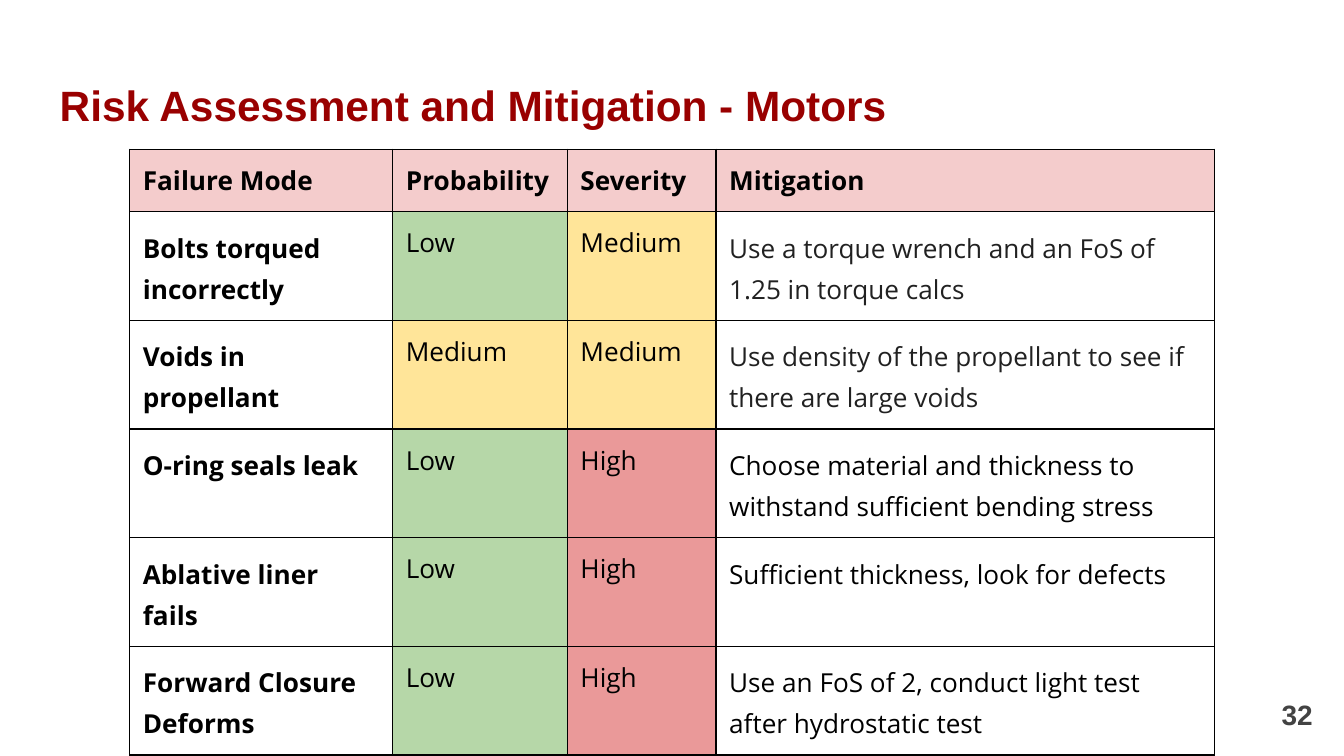
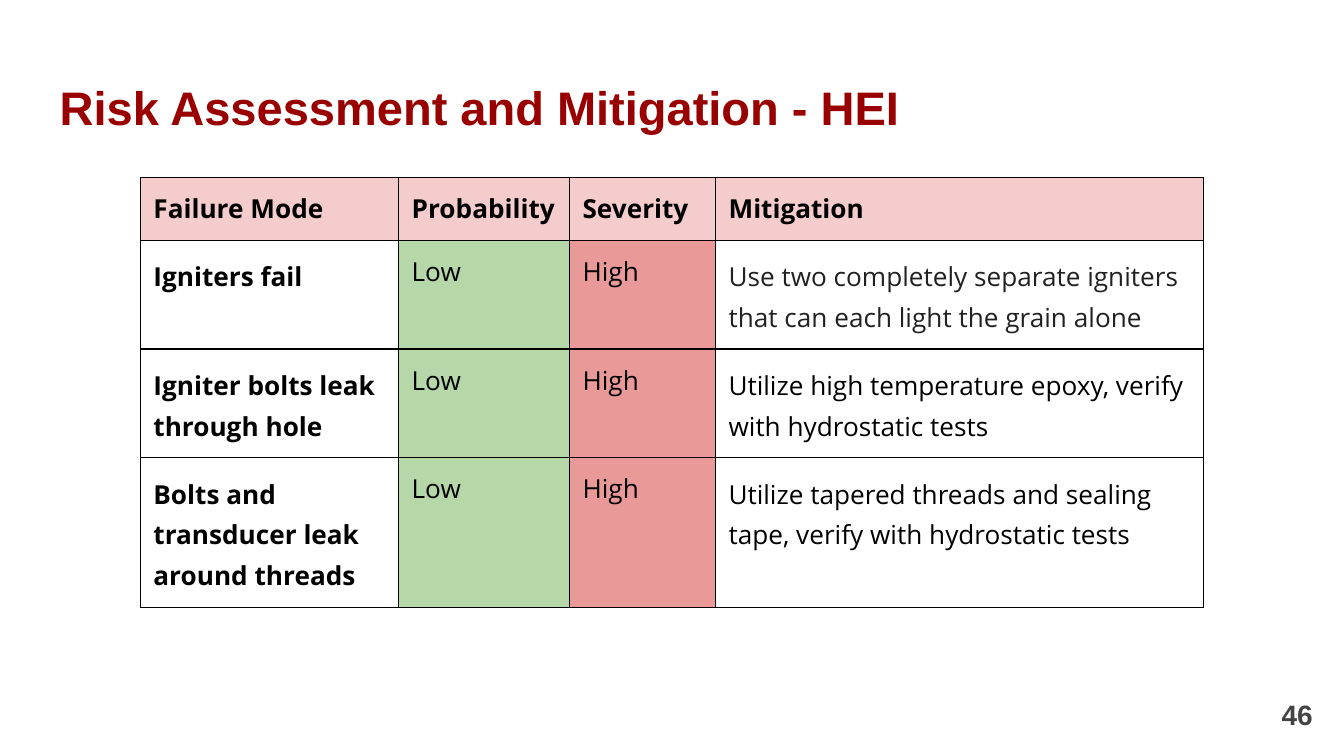
"""Build two risk assessment slides, each with a colour-coded failure mode table."""
import dataclasses

import lxml.etree
import pptx
import pptx.dml.color
import pptx.enum.text
import pptx.oxml.ns
import pptx.util

Cm = pptx.util.Cm
Pt = pptx.util.Pt
qn = pptx.oxml.ns.qn


@dataclasses.dataclass(frozen=True)
class Theme:
    title_font: str = "Arial"
    table_font: str = "Open Sans"
    number_size: float = 15
    table_size: float = 14
    line_height: float = 1.36
    body_spacing: float = 1.15
    title: str = "990000"
    number: str = "434343"
    text: str = "000000"
    soft_text: str = "212121"
    border: str = "000000"
    header_fill: str = "F4CCCC"


theme = Theme()
rating_fills = {"Low": "B6D7A8", "Medium": "FFE599", "High": "EA9999"}
headings = ("Failure Mode", "Probability", "Severity", "Mitigation")
inset = Cm(0.25)
line_height = Pt(theme.table_size * theme.line_height)

risk_slides = [
    {
        "title": "Risk Assessment and Mitigation - Motors",
        "title_size": 22.7,
        "number": "32",
        "left": 2.45,
        "top": 2.82,
        "columns": (4.97, 3.3, 2.81, 9.42),
        "soft_rows": 2,
        "body_lines": (2, 2, 2, 2, 2),
        "risks": [
            ("Bolts torqued incorrectly", "Low", "Medium",
             "Use a torque wrench and an FoS of 1.25 in torque calcs"),
            ("Voids in propellant", "Medium", "Medium",
             "Use density of the propellant to see if there are large voids"),
            ("O-ring seals leak", "Low", "High",
             "Choose material and thickness to withstand sufficient bending stress"),
            ("Ablative liner fails", "Low", "High",
             "Sufficient thickness, look for defects"),
            ("Forward Closure Deforms", "Low", "High",
             "Use an FoS of 2, conduct light test after hydrostatic test"),
        ],
    },
    {
        "title": "Risk Assessment and Mitigation - HEI",
        "title_size": 25.2,
        "number": "46",
        "left": 2.65,
        "top": 3.36,
        "columns": (4.88, 3.23, 2.76, 9.23),
        "soft_rows": 1,
        "body_lines": (2, 2, 3),
        "risks": [
            ("Igniters fail", "Low", "High",
             "Use two completely separate igniters that can each light the grain alone"),
            ("Igniter bolts leak through hole", "Low", "High",
             "Utilize high temperature epoxy, verify with hydrostatic tests"),
            ("Bolts and transducer leak around threads", "Low", "High",
             "Utilize tapered threads and sealing tape, verify with hydrostatic tests"),
        ],
    },
]


def write(holder, text, font, size, color, bold):
    holder.margin_left = holder.margin_right = inset
    holder.margin_top = holder.margin_bottom = inset
    holder.text = text
    paragraph = getattr(holder, "text_frame", holder).paragraphs[0]
    run_font = paragraph.runs[0].font
    run_font.name = font
    run_font.size = Pt(size)
    run_font.bold = bold
    run_font.color.rgb = pptx.dml.color.RGBColor.from_string(color)
    return paragraph


def style_cell(cell, fill):
    properties = cell._tc.get_or_add_tcPr()
    for side in ("a:lnL", "a:lnR", "a:lnT", "a:lnB"):
        line = lxml.etree.SubElement(properties, qn(side), w=str(Pt(0.75)))
        solid = lxml.etree.SubElement(line, qn("a:solidFill"))
        lxml.etree.SubElement(solid, qn("a:srgbClr"), val=theme.border)
    if fill:
        cell.fill.solid()
        cell.fill.fore_color.rgb = pptx.dml.color.RGBColor.from_string(fill)
    else:
        cell.fill.background()


presentation = pptx.Presentation()
presentation.slide_width = Cm(25.4)
presentation.slide_height = Cm(14.29)

for risk_slide in risk_slides:
    slide = presentation.slides.add_slide(presentation.slide_layouts[6])

    title = slide.shapes.add_textbox(Cm(0.88), Cm(1.24), Cm(23.67), Cm(1.6))
    title.text_frame.word_wrap = True
    write(title.text_frame, risk_slide["title"], theme.title_font,
          risk_slide["title_size"], theme.title, True)

    number = slide.shapes.add_textbox(Cm(23.54), Cm(12.95), Cm(1.52), Cm(1.09))
    number.text_frame.word_wrap = True
    number.text_frame.vertical_anchor = pptx.enum.text.MSO_ANCHOR.MIDDLE
    paragraph = write(number.text_frame, risk_slide["number"], theme.title_font,
                      theme.number_size, theme.number, True)
    paragraph.alignment = pptx.enum.text.PP_ALIGN.RIGHT

    rows = [headings, *risk_slide["risks"]]
    columns = risk_slide["columns"]
    row_lines = [1, *(lines * theme.body_spacing for lines in risk_slide["body_lines"])]
    row_heights = [Cm(0.51) + int(lines * line_height) for lines in row_lines]
    table = slide.shapes.add_table(
        len(rows), len(columns), Cm(risk_slide["left"]), Cm(risk_slide["top"]),
        Cm(sum(columns)), sum(row_heights)).table
    table.first_row = False
    table.horz_banding = False
    for column, width in zip(table.columns, columns):
        column.width = Cm(width)

    for row_index, row in enumerate(rows):
        table.rows[row_index].height = row_heights[row_index]
        is_header = row_index == 0
        for heading, cell, text in zip(headings, table.rows[row_index].cells, row):
            is_soft = heading == "Mitigation" and 0 < row_index <= risk_slide["soft_rows"]
            style_cell(cell, theme.header_fill if is_header else rating_fills.get(text))
            paragraph = write(cell, text, theme.table_font, theme.table_size,
                              theme.soft_text if is_soft else theme.text,
                              is_header or heading == "Failure Mode")
            if not is_header and heading in ("Failure Mode", "Mitigation"):
                paragraph.line_spacing = theme.body_spacing
                paragraph.space_after = Pt(12)

presentation.save("out.pptx")
